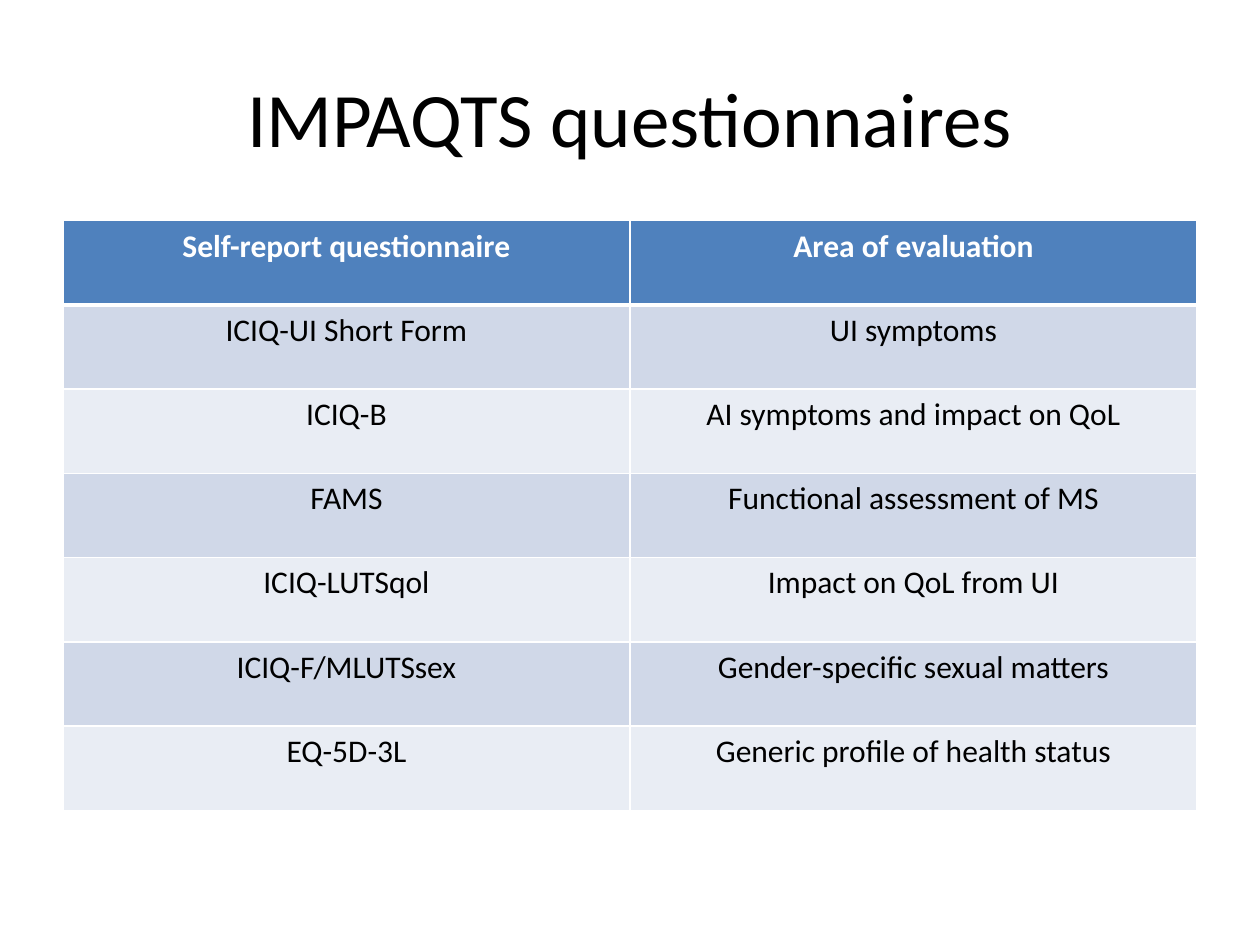
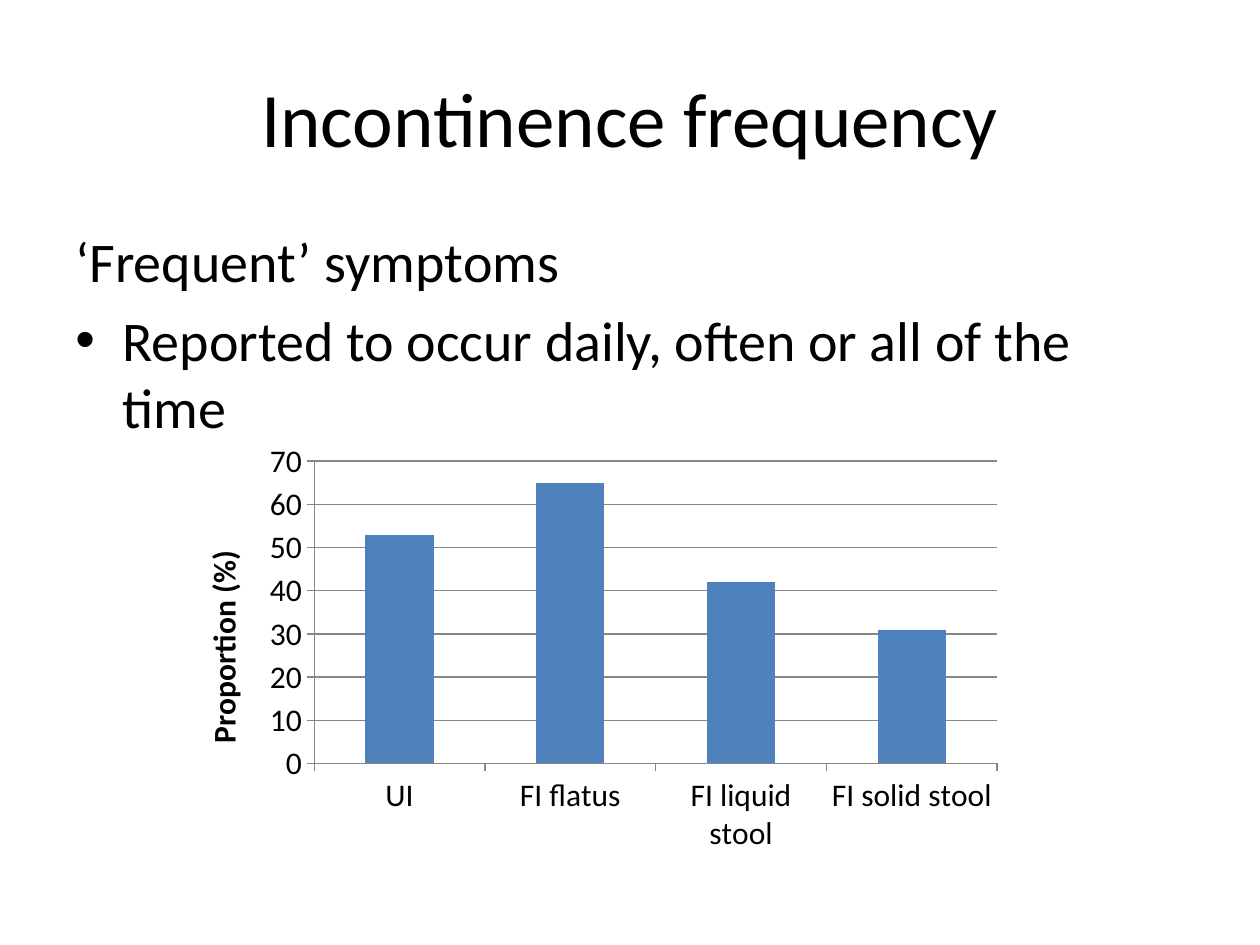
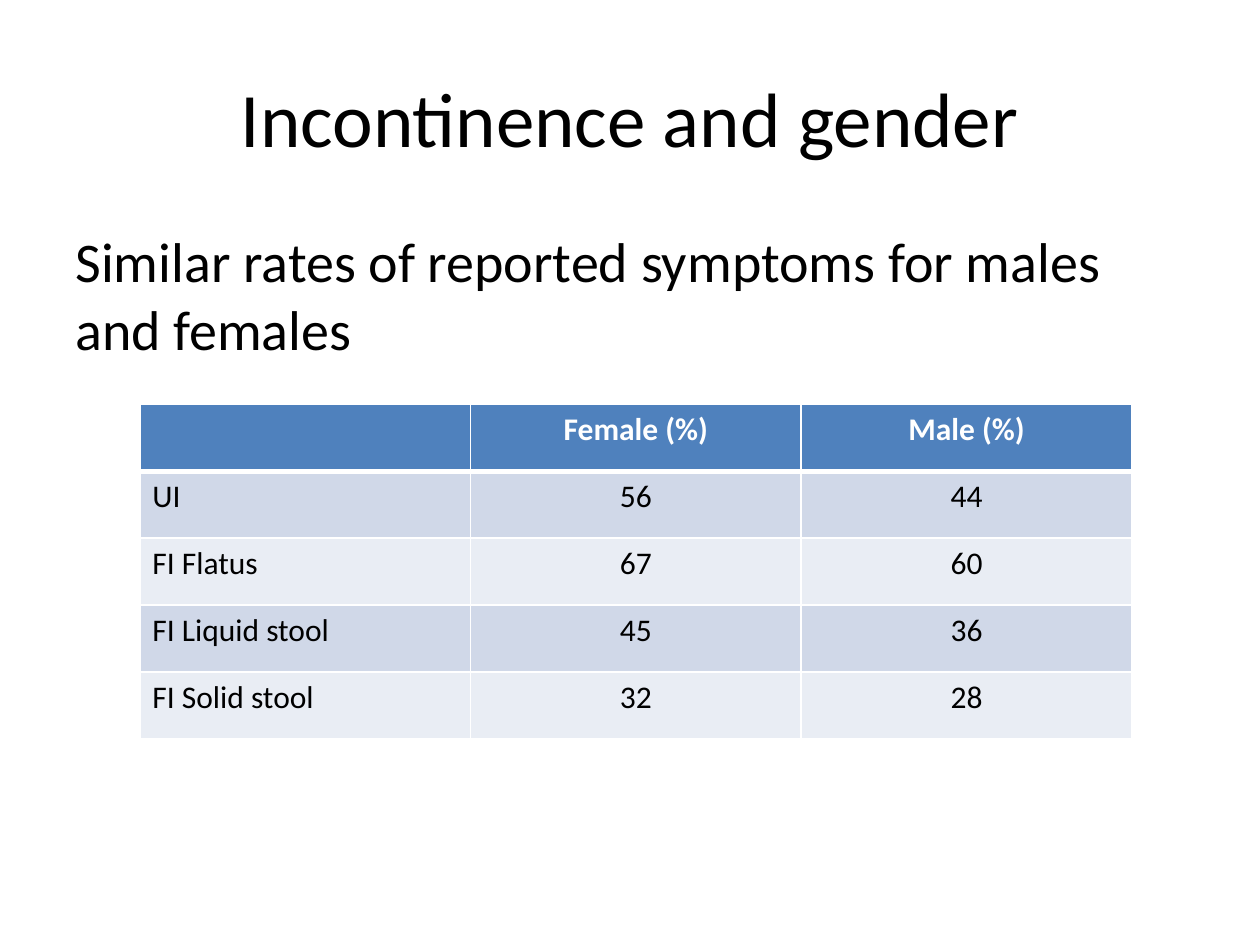
"""Build three slides on incontinence questionnaires, frequency and gender."""

from dataclasses import dataclass

import pptx
import pptx.chart.data
import pptx.dml.color
import pptx.enum.chart
import pptx.enum.text
import pptx.oxml
import pptx.oxml.ns
import pptx.util
from pptx.util import Cm

BLACK = pptx.dml.color.RGBColor(0x00, 0x00, 0x00)
WHITE = pptx.dml.color.RGBColor(0xFF, 0xFF, 0xFF)
BLUE = pptx.dml.color.RGBColor(0x4F, 0x81, 0xBD)
BAND_DARK = pptx.dml.color.RGBColor(0xD0, 0xD8, 0xE8)
BAND_LIGHT = pptx.dml.color.RGBColor(0xE9, 0xED, 0xF4)
GREY = pptx.dml.color.RGBColor(0x86, 0x86, 0x86)

FONT = "Calibri"
TITLE_SIZE, BODY_SIZE, SMALL_SIZE = 44, 32, 18
TITLE_ONLY_LAYOUT = 5
BULLET_INDENT = Cm(0.95)
CENTER = pptx.enum.text.PP_ALIGN.CENTER
LEFT = pptx.enum.text.PP_ALIGN.LEFT


@dataclass(frozen=True)
class Box:
    """Place and size of an element."""

    left: int
    top: int
    width: int
    height: int


@dataclass(frozen=True)
class BodyLine:
    """One paragraph of body text."""

    text: str
    bulleted: bool = False


@dataclass(frozen=True)
class TableContent:
    """A banded table whose first row is its header."""

    box: Box
    rows: tuple[tuple[str, ...], ...]
    first_column_alignment: pptx.enum.text.PP_ALIGN


TITLE_BOX = Box(Cm(1.27), Cm(0.76), Cm(22.86), Cm(3.18))
FREQUENCY_BODY_BOX = Box(Cm(1.27), Cm(4.45), Cm(22.86), Cm(4.67))
GENDER_BODY_BOX = Box(Cm(1.27), Cm(4.45), Cm(22.86), Cm(12.57))
CHART_BOX = Box(Cm(3.5), Cm(8.74), Cm(16.94), Cm(8.61))

FREQUENCIES = {"UI": 53, "FI flatus": 65, "FI liquid stool": 42, "FI solid stool": 31}

QUESTIONNAIRES = TableContent(
    Box(Cm(1.27), Cm(4.45), Cm(22.86), Cm(11.89)),
    (
        ("Self-report questionnaire", "Area of evaluation"),
        ("ICIQ-UI Short Form", "UI symptoms"),
        ("ICIQ-B", "AI symptoms and impact on QoL"),
        ("FAMS", "Functional assessment of MS"),
        ("ICIQ-LUTSqol", "Impact on QoL from UI"),
        ("ICIQ-F/MLUTSsex", "Gender-specific sexual matters"),
        ("EQ-5D-3L", "Generic profile of health status"),
    ),
    CENTER,
)

GENDER_RATES = TableContent(
    Box(Cm(2.82), Cm(8.15), Cm(20), Cm(6.75)),
    (
        ("", "Female (%)", "Male (%)"),
        ("UI", "56", "44"),
        ("FI Flatus", "67", "60"),
        ("FI Liquid stool", "45", "36"),
        ("FI Solid stool", "32", "28"),
    ),
    LEFT,
)


def style_font(font, size: int, color: pptx.dml.color.RGBColor, bold: bool = False) -> None:
    """Apply the shared typeface with a size, colour and weight."""
    font.name = FONT
    font.size = pptx.util.Pt(size)
    font.color.rgb = color
    font.bold = bold


def add_titled_slide(presentation, title: str):
    """Add a title-only slide and format its title."""
    slide = presentation.slides.add_slide(presentation.slide_layouts[TITLE_ONLY_LAYOUT])
    shape = slide.shapes.title
    shape.left, shape.top = TITLE_BOX.left, TITLE_BOX.top
    shape.width, shape.height = TITLE_BOX.width, TITLE_BOX.height
    text_frame = shape.text_frame
    text_frame.text = title
    text_frame.vertical_anchor = pptx.enum.text.MSO_ANCHOR.MIDDLE
    paragraph = text_frame.paragraphs[0]
    paragraph.alignment = CENTER
    style_font(paragraph.runs[0].font, TITLE_SIZE, BLACK)
    return slide


def add_bullet(paragraph) -> None:
    """Give a paragraph a round bullet and a hanging indent."""
    properties = paragraph._p.get_or_add_pPr()
    properties.set("marL", str(BULLET_INDENT))
    properties.set("indent", str(-BULLET_INDENT))
    namespace = pptx.oxml.ns.nsdecls("a")
    for xml in (f'<a:buFont {namespace} typeface="Arial"/>', f'<a:buChar {namespace} char="•"/>'):
        properties.append(pptx.oxml.parse_xml(xml))


def add_body(slide, box: Box, lines: tuple[BodyLine, ...]) -> None:
    """Add the body text under the title."""
    text_frame = slide.shapes.add_textbox(box.left, box.top, box.width, box.height).text_frame
    text_frame.word_wrap = True
    text_frame.text = "\n".join(line.text for line in lines)
    for paragraph, line in zip(text_frame.paragraphs, lines):
        paragraph.space_before = pptx.util.Pt(0.2 * BODY_SIZE)
        style_font(paragraph.runs[0].font, BODY_SIZE, BLACK)
        if line.bulleted:
            add_bullet(paragraph)


def set_borders(cell, top_width: int, bottom_width: int) -> None:
    """Draw white lines on the four sides of a cell."""
    properties = cell._tc.get_or_add_tcPr()
    widths = {"lnL": 1, "lnR": 1, "lnT": top_width, "lnB": bottom_width}
    for position, (side, width) in enumerate(widths.items()):
        border = pptx.oxml.parse_xml(
            f'<a:{side} {pptx.oxml.ns.nsdecls("a")} w="{pptx.util.Pt(width)}">'
            f'<a:solidFill><a:srgbClr val="{WHITE}"/></a:solidFill></a:{side}>'
        )
        properties.insert(position, border)


def add_banded_table(slide, content: TableContent) -> None:
    """Add a table with a blue header and alternating bands."""
    box, rows = content.box, content.rows
    table = slide.shapes.add_table(
        len(rows), len(rows[0]), box.left, box.top, box.width, box.height
    ).table
    for row_index, row in enumerate(rows):
        is_header = row_index == 0
        band = BAND_DARK if row_index % 2 else BAND_LIGHT
        for column_index, text in enumerate(row):
            cell = table.cell(row_index, column_index)
            cell.fill.solid()
            cell.fill.fore_color.rgb = BLUE if is_header else band
            set_borders(cell, 3 if row_index == 1 else 1, 3 if is_header else 1)
            cell.text_frame.text = text
            paragraph = cell.text_frame.paragraphs[0]
            paragraph.alignment = CENTER if column_index else content.first_column_alignment
            for run in paragraph.runs:
                style_font(run.font, SMALL_SIZE, WHITE if is_header else BLACK, is_header)


def add_frequency_chart(slide, box: Box) -> None:
    """Add the column chart of frequent symptoms."""
    chart_data = pptx.chart.data.CategoryChartData()
    chart_data.categories = list(FREQUENCIES)
    chart_data.add_series("Series 1", list(FREQUENCIES.values()))
    chart = slide.shapes.add_chart(
        pptx.enum.chart.XL_CHART_TYPE.COLUMN_CLUSTERED,
        box.left, box.top, box.width, box.height, chart_data,
    ).chart
    chart.has_legend = False
    chart.has_title = False
    style_font(chart.font, SMALL_SIZE, BLACK)

    plot = chart.plots[0]
    plot.gap_width = 150
    plot.vary_by_categories = False
    fill = plot.series[0].format.fill
    fill.solid()
    fill.fore_color.rgb = BLUE

    value_axis = chart.value_axis
    value_axis.minimum_scale, value_axis.maximum_scale, value_axis.major_unit = 0, 70, 10
    value_axis.has_major_gridlines = True
    title_frame = value_axis.axis_title.text_frame
    title_frame.text = "Proportion (%)"
    style_font(title_frame.paragraphs[0].runs[0].font, SMALL_SIZE, BLACK, True)
    for axis in (chart.category_axis, value_axis):
        axis.major_tick_mark = pptx.enum.chart.XL_TICK_MARK.OUTSIDE
    for lined in (chart.category_axis, value_axis, value_axis.major_gridlines):
        lined.format.line.color.rgb = GREY
        lined.format.line.width = pptx.util.Pt(0.75)


def main() -> None:
    """Build and save the presentation."""
    presentation = pptx.Presentation()
    presentation.slide_width, presentation.slide_height = Cm(25.4), Cm(19.05)

    slide = add_titled_slide(presentation, "IMPAQTS questionnaires")
    add_banded_table(slide, QUESTIONNAIRES)

    slide = add_titled_slide(presentation, "Incontinence frequency")
    add_body(slide, FREQUENCY_BODY_BOX, (
        BodyLine("‘Frequent’ symptoms"),
        BodyLine("Reported to occur daily, often or all of the time", bulleted=True),
    ))
    add_frequency_chart(slide, CHART_BOX)

    slide = add_titled_slide(presentation, "Incontinence and gender")
    add_body(slide, GENDER_BODY_BOX, (
        BodyLine("Similar rates of reported symptoms for males and females"),
    ))
    add_banded_table(slide, GENDER_RATES)

    presentation.save("out.pptx")


if __name__ == "__main__":
    main()
